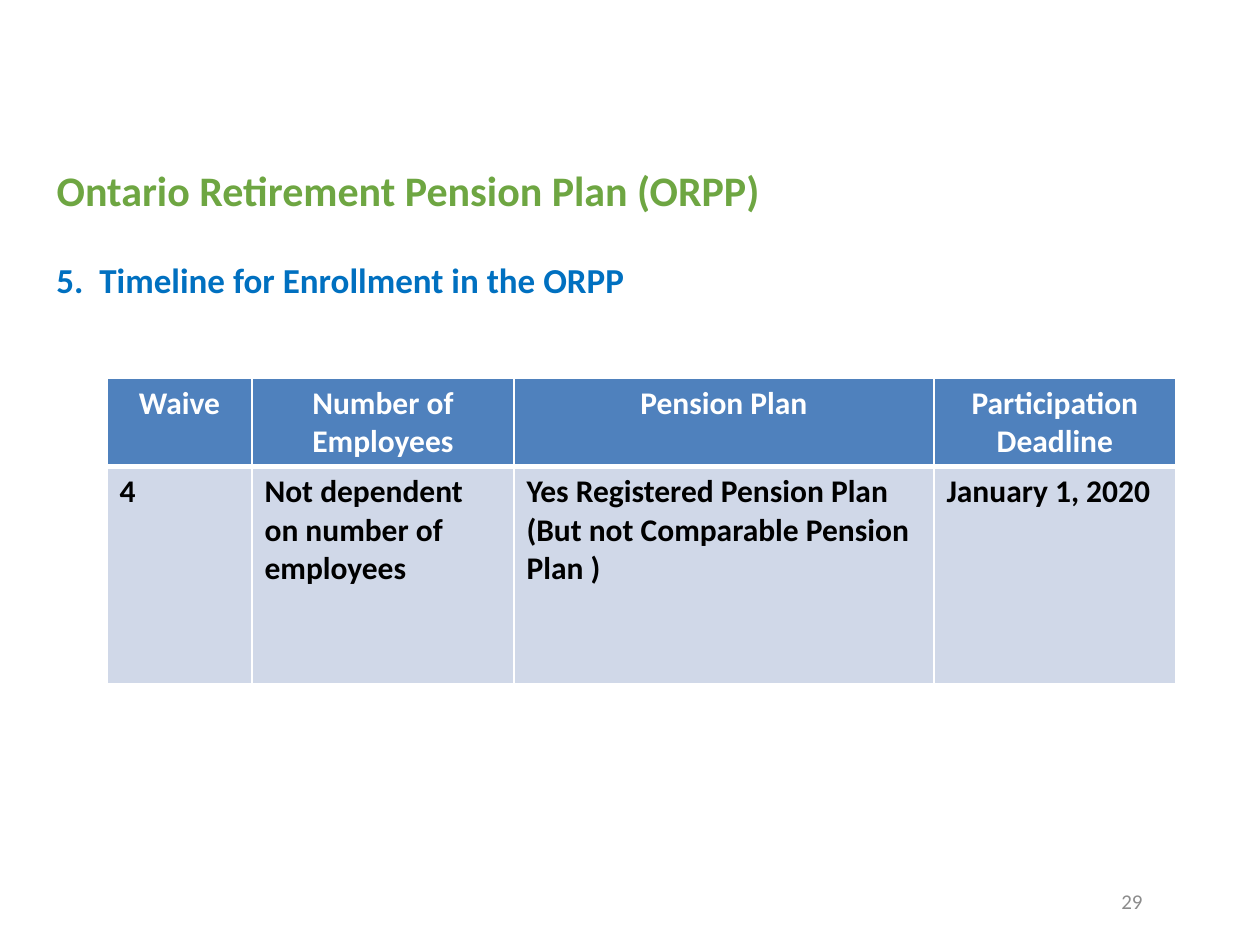
from dataclasses import dataclass

from lxml import etree
from pptx import Presentation
from pptx import util as u
from pptx.dml.color import RGBColor
from pptx.enum import text
from pptx.oxml import ns

SCALE = u.Inches(1) / 126  # EMU per px
FONT = "Calibri"
GREEN = RGBColor(0x6E, 0xA6, 0x42)
BLUE = RGBColor(0x00, 0x70, 0xC0)
GREY = RGBColor(0x8C, 0x8C, 0x8C)
HEAD = RGBColor(0x4F, 0x81, 0xBD)
PALE = RGBColor(0xD0, 0xD8, 0xE8)
WHITE = RGBColor(0xFF, 0xFF, 0xFF)
BLACK = RGBColor(0x00, 0x00, 0x00)
LEFT, MID, RIGHT = text.PP_ALIGN.LEFT, text.PP_ALIGN.CENTER, text.PP_ALIGN.RIGHT
TOP = text.MSO_ANCHOR.TOP


@dataclass(frozen=True)
class Box:
    x: int
    y: int
    w: int
    h: int


@dataclass(frozen=True)
class Row:
    cells: tuple[str, ...]
    high: int
    fill: RGBColor
    color: RGBColor
    align: text.PP_ALIGN
    edges: dict[str, int]  # border side to width in points


COLS = (145, 262, 420, 242)
ROWS = (
    Row(("Waive", "Number of Employees", "Pension Plan", "Participation Deadline"),
        88, HEAD, WHITE, MID, {"L": 1, "R": 1, "T": 1, "B": 3}),
    Row(("4", "Not dependent on number of employees",
         "Yes Registered Pension Plan (But not Comparable Pension Plan )",
         "January 1, 2020"),
        218, PALE, BLACK, LEFT, {"L": 1, "R": 1, "B": 1}),
)


def px(n: int) -> int:
    return round(n * SCALE)


def place(shape, box: Box) -> None:
    shape.left, shape.top = px(box.x), px(box.y)
    shape.width, shape.height = px(box.w), px(box.h)


def write(frame, words: str, *, size: int, color: RGBColor, bold: bool = True,
          align=LEFT, anchor=TOP, hang: int = 0) -> None:
    frame.word_wrap = True
    frame.vertical_anchor = anchor
    para = frame.paragraphs[0]
    para.alignment = align
    if hang:
        props = para._p.get_or_add_pPr()
        props.set("marL", str(px(hang)))
        props.set("indent", str(-px(hang)))
    run = para.add_run()
    run.text = words
    font = run.font
    font.name, font.size, font.bold = FONT, u.Pt(size), bold
    font.color.rgb = color


def label(slide, box: Box, words: str, **form) -> None:
    shape = slide.shapes.add_textbox(0, 0, 0, 0)
    place(shape, box)
    write(shape.text_frame, words, **form)


def edge(cell, side: str, width: int) -> None:
    line = etree.Element(ns.qn(f"a:ln{side}"), w=str(u.Pt(width)))
    fill = etree.SubElement(line, ns.qn("a:solidFill"))
    etree.SubElement(fill, ns.qn("a:srgbClr"), val=str(WHITE))
    cell._tc.get_or_add_tcPr().append(line)


def grid(slide, x: int, y: int) -> None:
    high = sum(row.high for row in ROWS)
    table = slide.shapes.add_table(
        len(ROWS), len(COLS), px(x), px(y), px(sum(COLS)), px(high)).table
    for col, wide in zip(table.columns, COLS):
        col.width = px(wide)
    for line, row in zip(table.rows, ROWS):
        line.height = px(row.high)
        for cell, words in zip(line.cells, row.cells):
            write(cell.text_frame, words, size=18, color=row.color, align=row.align)
            # Borders come before the fill in the cell properties
            for side, width in row.edges.items():
                edge(cell, side, width)
            cell.fill.solid()
            cell.fill.fore_color.rgb = row.fill


def main() -> None:
    deck = Presentation()
    deck.slide_width, deck.slide_height = px(1260), px(945)
    slide = deck.slides.add_slide(deck.slide_layouts[5])

    # Title and subheading
    title = slide.shapes.title
    place(title, Box(44, 158, 1172, 63))
    write(title.text_frame, "Ontario Retirement Pension Plan (ORPP)",
          size=24, color=GREEN, anchor=text.MSO_ANCHOR.BOTTOM)
    label(slide, Box(44, 252, 1172, 567), "5.\tTimeline for Enrollment in the ORPP",
          size=20, color=BLUE, hang=43)

    # Enrollment table
    grid(slide, 107, 378)

    # Page number
    label(slide, Box(903, 876, 252, 50), "29", size=12, color=GREY, bold=False,
          align=RIGHT, anchor=text.MSO_ANCHOR.MIDDLE)

    deck.save("out.pptx")


if __name__ == "__main__":
    main()
